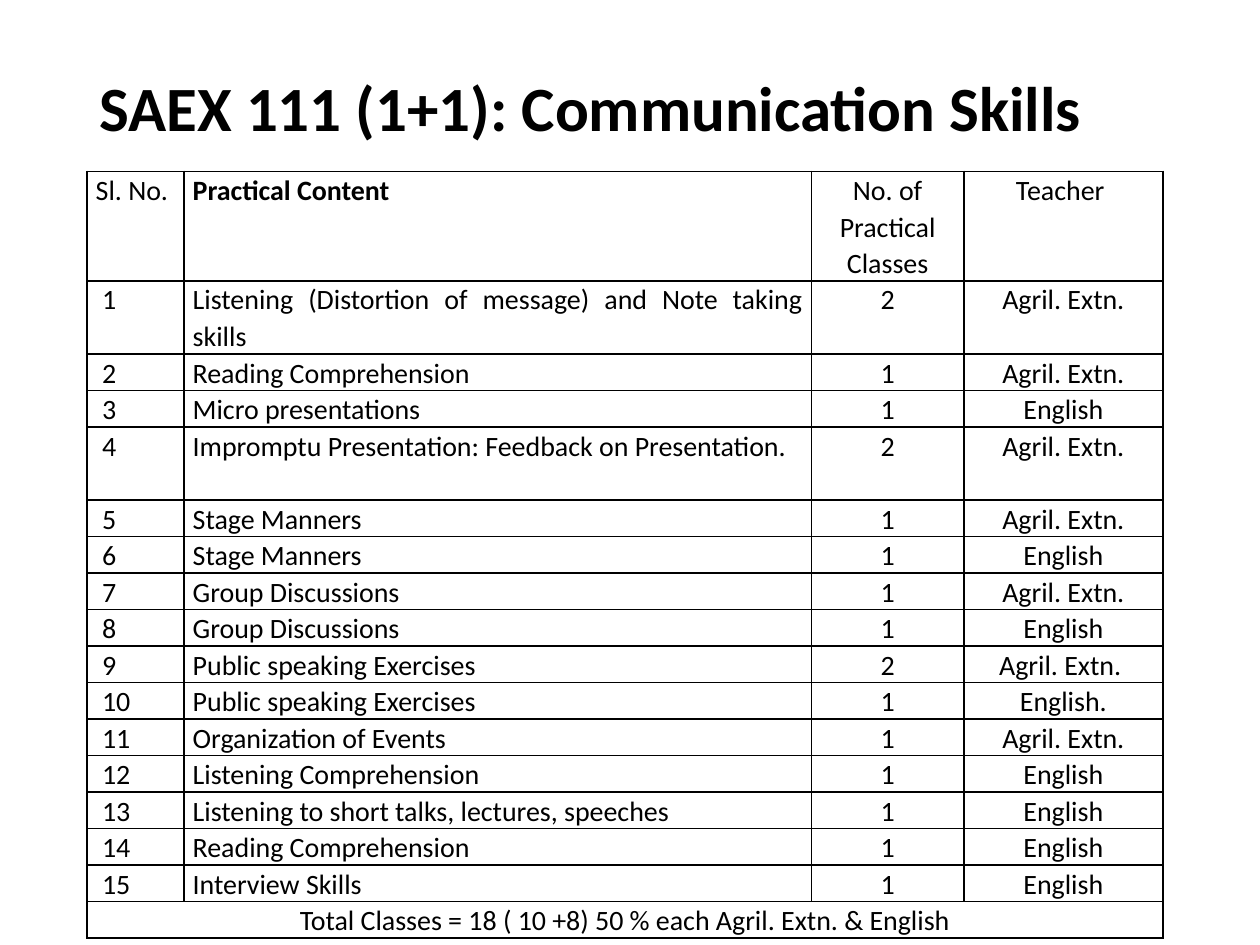
"""Build the practical course schedule slide."""
from dataclasses import dataclass

import pptx
import pptx.dml.color
import pptx.enum.text
import pptx.oxml
import pptx.oxml.ns
import pptx.util

Inches = pptx.util.Inches
Pt = pptx.util.Pt
ALIGN = pptx.enum.text.PP_ALIGN
ANCHOR = pptx.enum.text.MSO_ANCHOR


@dataclass(frozen=True)
class Theme:
    """Colours, font and type sizes of the slide."""
    ink: str = "000000"
    font: str = "Calibri"
    title_size: int = 36
    table_size: int = 16
    border_width: int = 1


THEME = Theme()
LINE_HEIGHT = 0.29
COLUMN_WIDTHS = (0.77, 4.98, 1.21, 1.58)
COLUMN_ALIGNMENTS = (ALIGN.JUSTIFY, ALIGN.JUSTIFY, ALIGN.CENTER, ALIGN.CENTER)
HEADER = ("Sl. No.", "Practical Content", "No. of Practical Classes", "Teacher ")
HEADER_LINES = 3
TOTAL = "Total Classes = 18 ( 10 +8) 50 % each Agril. Extn. & English"
IMPROMPTU = "Impromptu Presentation: Feedback on Presentation."
LESSONS = (
    ("Listening (Distortion of message) and Note taking skills", 2, "Agril. Extn."),
    ("Reading Comprehension", 1, "Agril. Extn."),
    ("Micro presentations", 1, "English"),
    (IMPROMPTU, 2, "Agril. Extn."),
    ("Stage Manners", 1, "Agril. Extn."),
    ("Stage Manners", 1, "English"),
    ("Group Discussions", 1, "Agril. Extn."),
    ("Group Discussions", 1, "English"),
    ("Public speaking Exercises", 2, "Agril. Extn. "),
    ("Public speaking Exercises", 1, "English."),
    ("Organization of Events", 1, "Agril. Extn."),
    ("Listening Comprehension", 1, "English"),
    ("Listening to short talks, lectures, speeches", 1, "English"),
    ("Reading Comprehension", 1, "English"),
    ("Interview Skills", 1, "English"),
)
TWO_LINE_LESSONS = (1, 4)


def add_text(paragraph, text, size, bold=False):
    """Add one styled run to a paragraph."""
    run = paragraph.add_run()
    run.text = text
    run.font.name = THEME.font
    run.font.size = Pt(size)
    run.font.bold = bold
    run.font.color.rgb = pptx.dml.color.RGBColor.from_string(THEME.ink)


def set_borders(cell):
    """Draw a solid line on all four sides of a cell."""
    properties = cell._tc.get_or_add_tcPr()
    for index, side in enumerate(("lnL", "lnR", "lnT", "lnB")):
        line = pptx.oxml.parse_xml(
            f'<a:{side} {pptx.oxml.ns.nsdecls("a")} w="{Pt(THEME.border_width)}">'
            f'<a:solidFill><a:srgbClr val="{THEME.ink}"/></a:solidFill></a:{side}>'
        )
        properties.insert(index, line)


def fill_cell(cell, text, alignment, bold=False, space_after=8):
    """Write one table cell with its margins and paragraph format."""
    cell.margin_left = cell.margin_right = Inches(0.07)
    cell.margin_top = cell.margin_bottom = 0
    paragraph = cell.text_frame.paragraphs[0]
    paragraph.alignment = alignment
    paragraph.line_spacing = 1.07
    paragraph.space_after = Pt(space_after)
    add_text(paragraph, text, THEME.table_size, bold)


def add_title(slide, left, top, width, height):
    """Place the course title in the given box."""
    shape = slide.shapes.add_textbox(left, top, width, height)
    frame = shape.text_frame
    frame.word_wrap = True
    frame.vertical_anchor = ANCHOR.MIDDLE
    paragraph = frame.paragraphs[0]
    paragraph.line_spacing = 0.9
    add_text(paragraph, "SAEX 111 (1+1): Communication Skills", THEME.title_size, True)


def add_schedule(slide, left, top, width):
    """Place the lesson table, its rows as tall as their lines of text."""
    line_counts = [HEADER_LINES]
    line_counts += [2 if n in TWO_LINE_LESSONS else 1 for n in range(1, len(LESSONS) + 1)]
    line_counts.append(1)
    height = Inches(LINE_HEIGHT * sum(line_counts))
    table = slide.shapes.add_table(
        len(line_counts), len(COLUMN_WIDTHS), left, top, width, height
    ).table
    table.first_row = table.horz_banding = False
    for column, column_width in zip(table.columns, COLUMN_WIDTHS):
        column.width = Inches(column_width)
    for row, lines in zip(table.rows, line_counts):
        row.height = Inches(LINE_HEIGHT * lines)
    for cell in table.iter_cells():
        cell.fill.background()
        set_borders(cell)

    for column, (text, alignment) in enumerate(zip(HEADER, COLUMN_ALIGNMENTS)):
        fill_cell(table.cell(0, column), text, alignment, bold=column == 1)
    for number, (content, classes, teacher) in enumerate(LESSONS, start=1):
        values = (f" {number}", content, str(classes), teacher)
        for column, (text, alignment) in enumerate(zip(values, COLUMN_ALIGNMENTS)):
            if text == IMPROMPTU:
                alignment = ALIGN.LEFT
            fill_cell(table.cell(number, column), text, alignment,
                      space_after=8 if column else 0)

    last = len(line_counts) - 1
    table.cell(last, 0).merge(table.cell(last, len(COLUMN_WIDTHS) - 1))
    fill_cell(table.cell(last, 0), TOTAL, ALIGN.CENTER)


def main():
    """Create the presentation and save it."""
    presentation = pptx.Presentation()
    presentation.slide_width = Inches(10)
    presentation.slide_height = Inches(7.5)
    slide = presentation.slides.add_slide(presentation.slide_layouts[6])
    add_title(slide, Inches(0.69), Inches(0.4), Inches(8.62), Inches(0.96))
    add_schedule(slide, Inches(0.69), Inches(1.36), Inches(sum(COLUMN_WIDTHS)))
    presentation.save("out.pptx")


if __name__ == "__main__":
    main()
